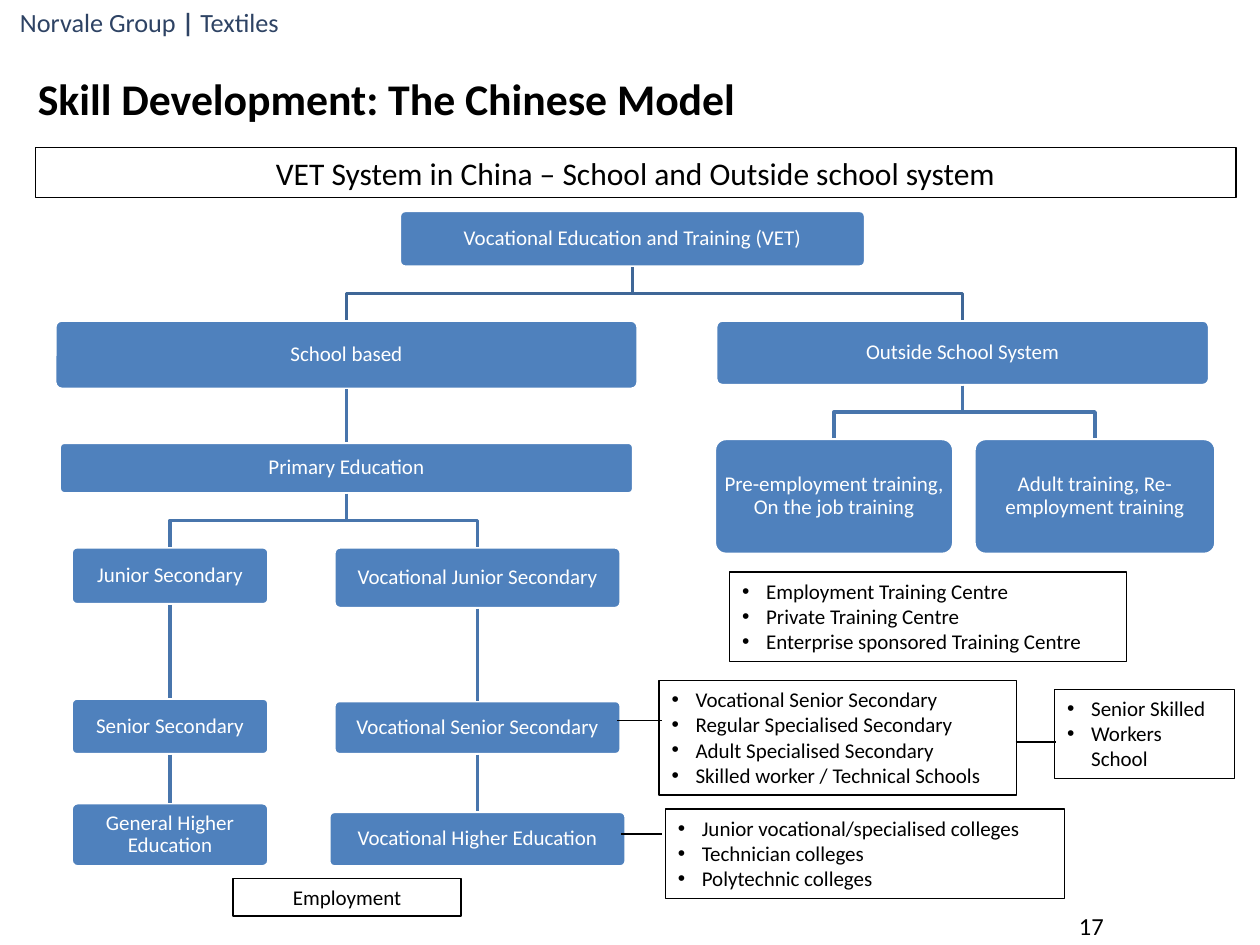
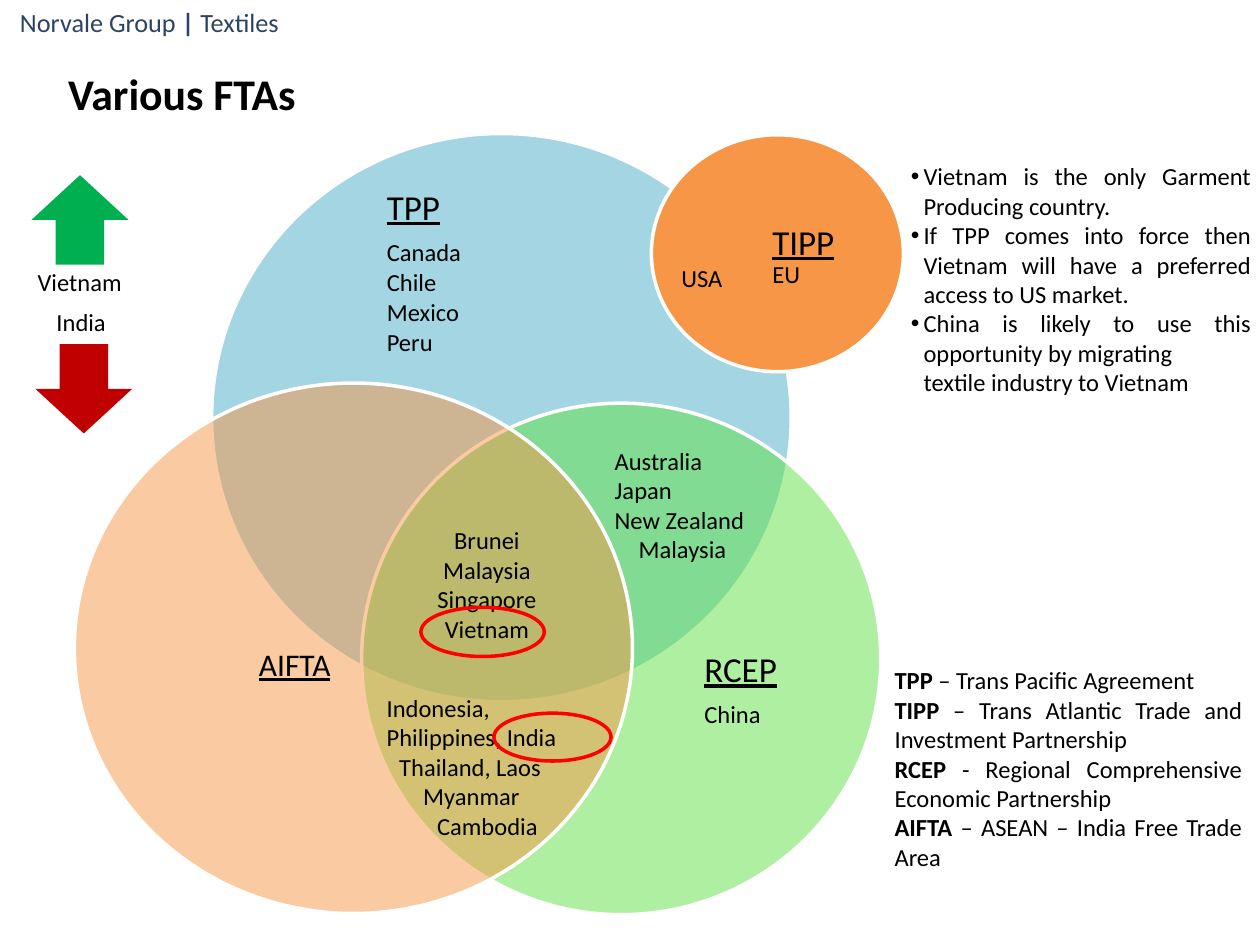
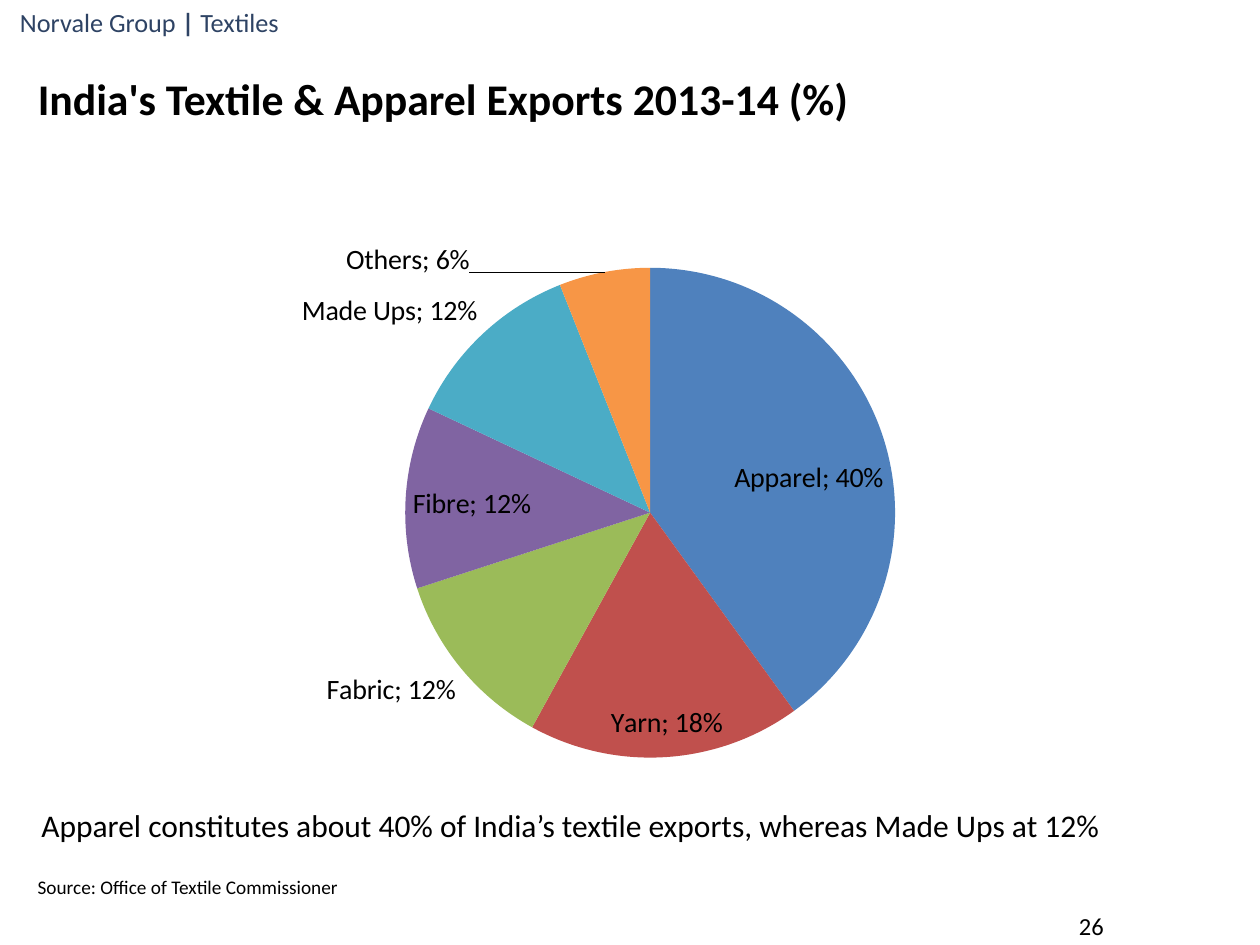
"""Build three slides on textile skills, trade pacts and exports."""
from copy import deepcopy

from lxml.etree import SubElement
from pptx import Presentation
from pptx.chart.data import CategoryChartData
from pptx.dml.color import RGBColor
from pptx.enum.chart import XL_CHART_TYPE, XL_LABEL_POSITION
from pptx.enum.shapes import MSO_CONNECTOR, MSO_SHAPE
from pptx.enum.text import MSO_ANCHOR, MSO_AUTO_SIZE, PP_ALIGN
from pptx.oxml.ns import qn
from pptx.oxml.xmlchemy import OxmlElement
from pptx.util import Inches, Pt

LEFT, MID, RIGHT, FULL = PP_ALIGN.LEFT, PP_ALIGN.CENTER, PP_ALIGN.RIGHT, PP_ALIGN.JUSTIFY
TOP, MIDDLE = MSO_ANCHOR.TOP, MSO_ANCHOR.MIDDLE
FIXED = MSO_AUTO_SIZE.NONE
RECT, ROUND = MSO_SHAPE.RECTANGLE, MSO_SHAPE.ROUNDED_RECTANGLE
OVAL, ARROW = MSO_SHAPE.OVAL, MSO_SHAPE.UP_ARROW
STRAIGHT = MSO_CONNECTOR.STRAIGHT
PIE, FIT = XL_CHART_TYPE.PIE, XL_LABEL_POSITION.BEST_FIT

FONT = "Calibri"
COLS, ROWS = 100, 75
PAIR, FOUR, PLAIN = 3, 4, 5
HUES = {
    "ink": "000000", "white": "FFFFFF", "brand": "2E4364",
    "blue": "4F81BD", "trunk": "3F6797", "branch": "4875AC",
    "brick": "C0504D", "olive": "9BBB59", "plum": "8064A2",
    "teal": "4BACC6", "orange": "F79646", "lime": "60E146",
    "up": "00B050", "down": "C00000", "ring": "FF0000",
}


def hue(name):
    """Return a named colour."""
    return RGBColor.from_string(HUES[name])


def indent(para, left=0, first=0, mark=None):
    """Set a paragraph's indents in inches and its bullet."""
    props = para._p.get_or_add_pPr()
    props.set("marL", str(Inches(left)))
    props.set("indent", str(Inches(first)))
    if mark:
        SubElement(props, qn("a:buChar"), char=mark)
    else:
        SubElement(props, qn("a:buNone"))


def write(shape, paras, size=14, color="ink", bold=False, align=LEFT, anchor=TOP,
          inset=(0.1, 0.05), wrap=True, lead=None, after=(), dents=()):
    """Fill a shape with paragraphs of plain strings or (text, format) runs."""
    frame = shape.text_frame
    frame.auto_size, frame.word_wrap, frame.vertical_anchor = FIXED, wrap, anchor
    frame.margin_left = frame.margin_right = Inches(inset[0])
    frame.margin_top = frame.margin_bottom = Inches(inset[1])
    for i, runs in enumerate([paras] if isinstance(paras, str) else paras):
        para = frame.paragraphs[0] if i == 0 else frame.add_paragraph()
        para.alignment = align
        para.space_before = Pt(0)
        para.space_after = Pt(after[i] if i < len(after) else 0)
        if lead:
            para.line_spacing = lead
        indent(para, *(dents[i] if i < len(dents) else ()))
        for text, form in [(runs, {})] if isinstance(runs, str) else runs:
            run = para.add_run()
            run.text = text
            font = run.font
            font.name, font.size = FONT, Pt(form.get("size", size))
            font.bold = form.get("bold", bold)
            font.underline = form.get("under", False)
            font.color.rgb = hue(color)


def layout(**spot):
    """Return a manual chart layout."""
    node = OxmlElement("c:layout")
    inner = SubElement(node, qn("c:manualLayout"))
    for key, val in spot.items():
        SubElement(inner, qn(f"c:{key}"), val=str(val))
    return node


class Deck:
    """Hold the shared style and the current slide."""

    def __init__(self):
        """Start an empty deck on a grid of columns and rows."""
        self.prs = Presentation()
        self.prs.slide_width, self.prs.slide_height = Inches(10), Inches(7.5)
        self.col = self.prs.slide_width / COLS
        self.row = self.prs.slide_height / ROWS

    def grid(self, *vals):
        """Turn alternating columns and rows into lengths."""
        return [round(v * (self.row if i % 2 else self.col)) for i, v in enumerate(vals)]

    def move(self, shape, at):
        """Put a placeholder at a grid place."""
        shape.left, shape.top, shape.width, shape.height = self.grid(*at)

    def page(self, kind, title, at=(2, 5.2, 84.2, 6.7), number=None):
        """Add a slide with its title, header and page number."""
        self.slide = self.prs.slides.add_slide(self.prs.slide_layouts[kind])
        self.shapes = self.slide.shapes
        head = self.shapes.title
        self.slots = [s for s in self.slide.placeholders if s.shape_id != head.shape_id]
        self.move(head, at)
        write(head, title, size=25, bold=True)
        self.text([[("Norvale Group ", {}), ("| ", {"bold": True}), ("Textiles", {})]],
                  (0.6, 0, 24.5, 3.5), size=15, color="brand", wrap=False)
        if number:
            self.text(number, (65.3, 72, 23.3, 3), align=RIGHT, anchor=MIDDLE)

    def text(self, paras, at, **form):
        """Add a text box."""
        write(self.shapes.add_textbox(*self.grid(*at)), paras, **form)

    def dress(self, shape, fill=None, line=None, width=2, alpha=None):
        """Set fill, outline and transparency."""
        shape.shadow.inherit = False
        if fill:
            shape.fill.solid()
            shape.fill.fore_color.rgb = hue(fill)
        else:
            shape.fill.background()
        if alpha:
            tint = shape._element.spPr.find(qn("a:solidFill"))[0]
            SubElement(tint, qn("a:alpha"), val=str(alpha * 1000))
        if line:
            shape.line.color.rgb = hue(line)
            shape.line.width = Pt(width)
        else:
            shape.line.fill.background()

    def shape(self, kind, at, turn=0, **look):
        """Add a preset shape."""
        shape = self.shapes.add_shape(kind, *self.grid(*at))
        shape.rotation = turn
        self.dress(shape, **look)
        return shape

    def frame(self, text, at, size):
        """Add a thinly outlined box with centred text."""
        write(self.shape(RECT, at, line="ink", width=0.75), text, size=size, align=MID)

    def items(self, paras, at, framed=False, **form):
        """Fill the next body placeholder with a list."""
        slot = self.slots.pop(0)
        self.move(slot, at)
        if framed:
            slot.line.color.rgb = hue("ink")
            slot.line.width = Pt(0.75)
        write(slot, paras, **form)

    def node(self, text, mid, top, wide, high):
        """Add a rounded box of the tree, centred on a column."""
        box = self.shape(ROUND, (mid - wide / 2, top, wide, high), fill="blue", line="white")
        box.adjustments[0] = 0.1
        write(box, text, size=12, color="white", align=MID, anchor=MIDDLE,
              inset=(0.05, 0.05), lead=0.9)
        return box

    def line(self, x1, y1, x2, y2, color="ink", width=0.75):
        """Add a straight line."""
        line = self.shapes.add_connector(STRAIGHT, *self.grid(x1, y1, x2, y2))
        line.line.color.rgb = hue(color)
        line.line.width = Pt(width)
        SubElement(line._element.spPr, qn("a:effectLst"))
        return line

    def link(self, start, end, color):
        """Join a parent box to a child, straight or through a bend."""
        x1, x2 = (b.left + b.width // 2 for b in (start, end))
        y1, y2 = start.top + start.height, end.top
        if abs(x1 - x2) < self.col / 10:
            line = self.line(0, 0, 1, 1, color, 2)
            line.begin_connect(start, 2)
            line.end_connect(end, 0)
            return
        half = (y1 + y2) // 2
        path = self.shapes.build_freeform(x1, y1)
        path.add_line_segments([(x1, half), (x2, half), (x2, y2)], close=False)
        self.dress(path.convert_to_shape(), line=color)

    def pie(self, parts, at, plot, shift):
        """Add a pie of (name, share, colour), shifting its last label."""
        data = CategoryChartData(number_format="0%")
        data.categories = [name for name, _, _ in parts]
        data.add_series("Series 1", [share for _, share, _ in parts])
        chart = self.shapes.add_chart(PIE, *self.grid(*at), data).chart
        chart.has_legend = chart.has_title = False
        chart.font.name, chart.font.size = FONT, Pt(10)
        chart.font.color.rgb = hue("ink")
        chart.plots[0].vary_by_categories = True
        series = chart.plots[0].series[0]
        for i, (_, _, color) in enumerate(parts):
            fill = series.points[i].format.fill
            fill.solid()
            fill.fore_color.rgb = hue(color)
        labels = series.data_labels
        labels.show_value = labels.show_category_name = True
        labels.number_format, labels.number_format_is_linked = "0%", False
        labels.position = FIT
        labels.font.name, labels.font.size = FONT, Pt(16)
        labels.font.color.rgb = hue("ink")
        root = labels._element
        gap = OxmlElement("c:separator")
        gap.text = "; "
        root.find(qn("c:showBubbleSize")).addnext(gap)
        last = OxmlElement("c:dLbl")
        SubElement(last, qn("c:idx"), val=str(len(parts) - 1))
        last.append(layout(x=shift[0], y=shift[1]))
        last.extend([deepcopy(n) for n in root if not n.tag.endswith("LeaderLines")])
        root.insert(0, last)
        area = chart._chartSpace.chart.plotArea
        for old in area.findall(qn("c:layout")):
            area.remove(old)
        area.insert(0, layout(layoutTarget="inner", xMode="edge", yMode="edge",
                              **dict(zip("xywh", plot))))


def skills(deck):
    """Draw the training tree."""
    deck.page(FOUR, "Skill Development: The Chinese Model", number="17")
    tree = {
        "vet": ("Vocational Education and Training (VET)", 50.2, 16.7, 37, 4.5),
        "school": ("School based", 27.5, 25.4, 46.3, 5.5),
        "prime": ("Primary Education", 27.5, 35.1, 45.6, 4.1),
        "junior": ("Junior Secondary", 13.5, 43.4, 15.7, 4.6),
        "senior": ("Senior Secondary", 13.5, 55.4, 15.7, 4.5),
        "higher": ("General Higher Education", 13.5, 63.7, 15.7, 5.1),
        "vjunior": ("Vocational Junior Secondary", 37.9, 43.4, 22.8, 4.9),
        "vsenior": ("Vocational Senior Secondary", 37.9, 55.6, 22.8, 4.3),
        "vhigher": ("Vocational Higher Education", 37.9, 64.4, 23.6, 4.4),
        "outside": ("Outside School System", 76.4, 25.4, 39.2, 5.2),
        "job": ("Pre-employment training, On the job training", 66.2, 34.8, 19, 9.2),
        "adult": ("Adult training, Re-employment training", 86.9, 34.8, 19.2, 9.2),
    }
    links = {
        "vet": ("school", "outside"), "school": ("prime",), "prime": ("junior", "vjunior"),
        "junior": ("senior",), "senior": ("higher",), "vjunior": ("vsenior",),
        "vsenior": ("vhigher",), "outside": ("job", "adult"),
    }
    boxes = {key: deck.node(*spot) for key, spot in tree.items()}
    for start, ends in links.items():
        for end in ends:
            deck.link(boxes[start], boxes[end], "trunk" if start == "vet" else "branch")
    deck.frame("VET System in China – School and Outside school system",
               (2.8, 11.7, 95.3, 4), 18)
    deck.frame("Employment", (18.5, 69.7, 18.1, 3), 12)
    lists = [
        ((57.9, 45.4, 31.5, 7.1), ["Employment Training Centre", "Private Training Centre",
                                   "Enterprise sponsored Training Centre"]),
        ((52.3, 54, 28.4, 9.1), ["Vocational Senior Secondary", "Regular Specialised Secondary",
                                 "Adult Specialised Secondary",
                                 "Skilled worker / Technical Schools"]),
        ((52.8, 64.2, 31.7, 7.1), ["Junior vocational/specialised colleges",
                                   "Technician colleges", "Polytechnic colleges"]),
        ((83.7, 54.7, 14.3, 7.1), ["Senior Skilled", "Workers School"]),
    ]
    for at, paras in lists:
        deck.items(paras, at, framed=True, size=12, dents=[(0.19, -0.19, "•")] * len(paras))
    for left, right, y in [(49, 52.5, 57.2), (49.3, 52.5, 66.2), (80.6, 83.8, 58.9)]:
        deck.line(left, y, right, y)


def pacts(deck):
    """Draw the overlapping trade pacts."""
    deck.page(PAIR, "Various FTAs", at=(4.4, 4.8, 84.2, 6.7))
    for at, fill, alpha in [((16.8, 10.6, 46, 45.1), "teal", 50),
                            ((28.7, 32, 41.2, 40.6), "lime", 50),
                            ((5.9, 30.4, 44.3, 42.1), "orange", 50),
                            ((51.7, 10.7, 20, 18.8), "orange", None)]:
        deck.shape(OVAL, at, fill=fill, line="white", alpha=alpha)
    name, small, bold = {"size": 20, "under": True}, {"size": 14}, {"bold": True}
    tight = {"anchor": MIDDLE, "inset": (0, 0), "lead": 0.9}
    deck.text([[("AIFTA", {"under": True})]], (10.1, 41.3, 26.6, 23.1),
              size=18, align=MID, **tight)
    deck.text([[("TIPP ", name), ("EU", small)]], (61.3, 13.2, 6.4, 14.4), **tight)
    deck.text([[("TPP", name)], "Canada", "Chile", "Mexico", "Peru"],
              (30.7, 10.7, 11.8, 22), after=(7, 2.1, 2.1, 2.1, 2.1), **tight)
    deck.text([[("RCEP", name)], "China"], (55.9, 43.8, 11.8, 22), after=(7, 2.1), **tight)
    deck.text(["Brunei", "Malaysia", "Singapore", "Vietnam"], (28, 41.2, 21.3, 10.4), align=MID)
    deck.text(["Indonesia,", "Philippines, India", "Thailand, Laos", "Myanmar", "Cambodia"],
              (29.7, 54.5, 25.2, 12.8), dents=[(0, x) for x in (0, 0, 0.1, 0.29, 0.4)])
    deck.text(["Australia", "Japan", "New Zealand", "Malaysia"], (47.8, 34.9, 17.1, 10.4),
              dents=[(0, x) for x in (0, 0, 0, 0.19)])
    deck.text("USA", (53.1, 20.4, 9.3, 3.4))
    deck.text("Vietnam", (2, 20.7, 9.4, 3.4), align=FULL)
    deck.text("India", (3.5, 23.9, 9.4, 3.4), align=FULL)
    deck.shape(ARROW, (2.5, 13.9, 7.7, 7.1), fill="up")
    deck.shape(ARROW, (2.8, 27.3, 7.7, 7.1), turn=180, fill="down")
    for at in [(33.4, 48.2, 9.8, 3.9), (39.2, 56.6, 9.3, 3.8)]:
        deck.shape(OVAL, at, line="ring")
    deck.items(["Vietnam is the only Garment Producing country.",
                "If TPP comes into force then Vietnam will have a preferred access to US market.",
                "China is likely to use this opportunity by migrating",
                "textile industry to Vietnam"],
               (71.3, 12.3, 29, 19.9), align=FULL,
               dents=[(0.1, -0.1, "•")] * 3 + [(0.1, 0)])
    terms = {"TPP": " – Trans Pacific Agreement",
             "TIPP": " – Trans Atlantic Trade and Investment Partnership",
             "RCEP": " - Regional Comprehensive Economic Partnership",
             "AIFTA": " – ASEAN – India Free Trade Area"}
    deck.items([[(key, bold), (text, {})] for key, text in terms.items()],
               (70, 52.3, 29.6, 17.5), align=FULL)


def exports(deck):
    """Draw the export shares."""
    deck.page(PLAIN, "India's Textile & Apparel Exports 2013-14 (%)", number="26")
    deck.pie([("Apparel", 0.4, "blue"), ("Yarn", 0.18, "brick"), ("Fabric", 0.12, "olive"),
              ("Fibre", 0.12, "plum"), ("Made Ups", 0.12, "teal"), ("Others", 0.06, "orange")],
             (7.5, 13.1, 88.2, 48), plot=(0.26, 0.17, 0.48, 0.81), shift=(-0.12, 0.02))
    deck.text("Source: Office of Textile Commissioner", (2, 69, 80.2, 2.9), size=11)
    deck.text("Apparel constitutes about 40% of India’s textile exports, whereas Made Ups at 12%",
              (2.3, 63.5, 94.5, 4), size=18)


def main():
    """Build and save the deck."""
    deck = Deck()
    for draw in (skills, pacts, exports):
        draw(deck)
    deck.prs.save("out.pptx")


if __name__ == "__main__":
    main()
